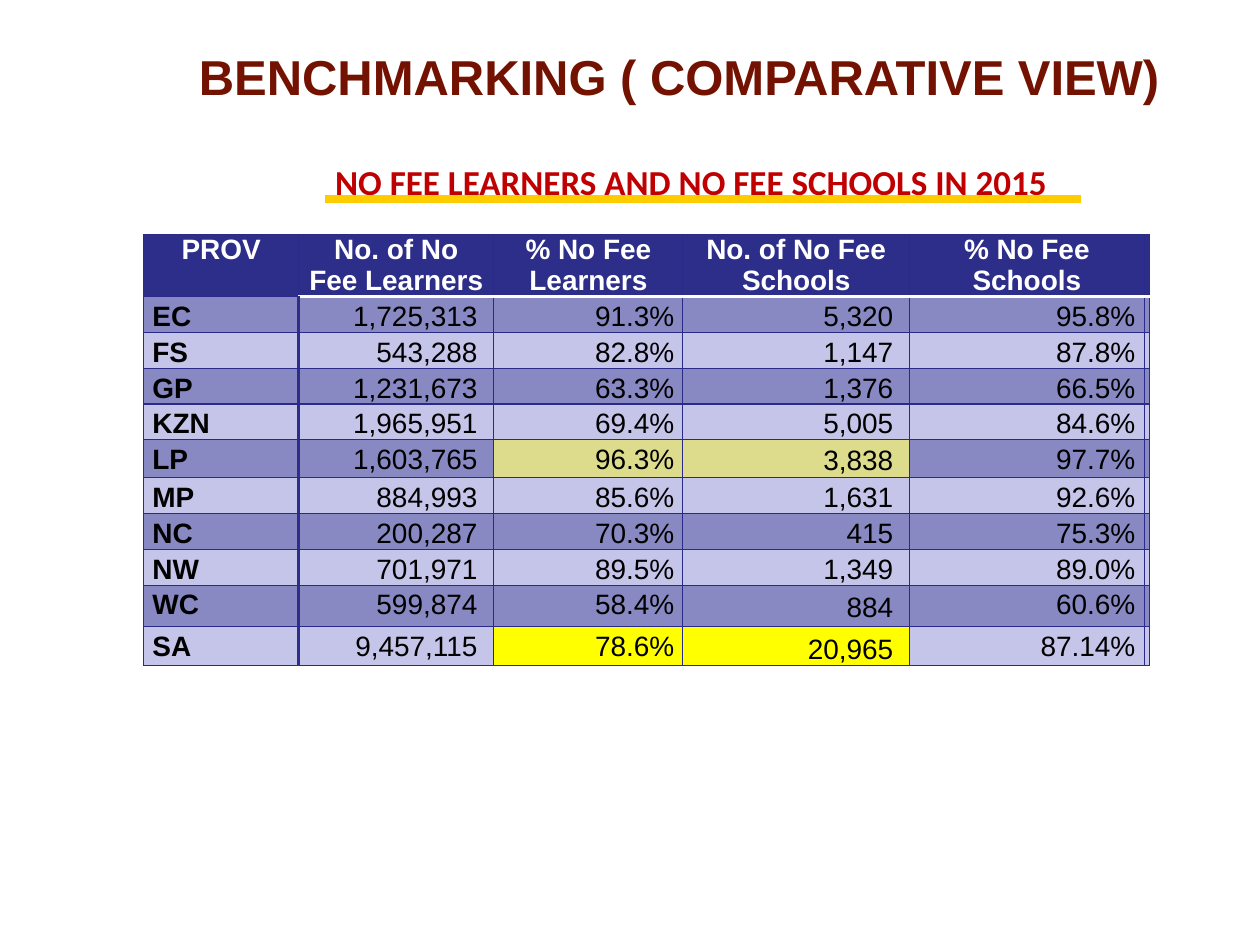
from lxml import etree
from pptx import Presentation
from pptx.dml.color import RGBColor
from pptx.enum import shapes, text
from pptx.oxml import ns
from pptx.util import Inches, Pt

HUES = {"navy": "2D2D8A", "edge": "2A2A89", "dark": "8888C2", "light": "C5C4E9",
        "lime": "DCDC8C", "yellow": "FFFF00", "gold": "FFCC00", "red": "C00000",
        "brown": "741202", "white": "FFFFFF", "black": "000000"}
HEAD = ["PROV", "No. of No Fee Learners", "% No Fee Learners",
        "No. of No Fee Schools", "% No Fee Schools", ""]
ROWS = [
    ["EC", "1,725,313 ", "91.3%", "5,320 ", "95.8%", ""],
    ["FS", "543,288 ", "82.8%", "1,147 ", "87.8%", ""],
    ["GP", "1,231,673 ", "63.3%", "1,376 ", "66.5%", ""],
    ["KZN", "1,965,951 ", "69.4%", "5,005 ", "84.6%", ""],
    ["LP", "1,603,765 ", "96.3%", "3,838 ", "97.7%", ""],
    ["MP", "884,993 ", "85.6%", "1,631 ", "92.6%", ""],
    ["NC", "200,287 ", "70.3%", "415 ", "75.3%", ""],
    ["NW", "701,971 ", "89.5%", "1,349 ", "89.0%", ""],
    ["WC", "599,874 ", "58.4%", "884 ", "60.6%", ""],
    ["SA", "9,457,115 ", "78.6%", "20,965 ", "87.14%", ""],
]
WIDE = [1.23, 1.55, 1.5, 1.8, 1.86, 0.04]
HIGH = [0.49] + [0.28] * 4 + [0.3] + [0.28] * 3 + [0.33, 0.31]
MARKS = {(5, 2): "lime", (5, 3): "lime", (10, 2): "yellow", (10, 3): "yellow"}


def put(para, words, size, hue, bold=True, face="Arial"):
    """Add one formatted run to a paragraph."""
    run = para.add_run()
    run.text = words
    font = run.font
    font.size, font.bold, font.name = Pt(size), bold, face
    font.color.rgb = RGBColor.from_string(HUES[hue])


def rule(cell, side, hue="edge", width=0.75):
    """Draw one border of a cell; sides must come in the order L, R, T, B."""
    line = etree.SubElement(cell._tc.get_or_add_tcPr(), ns.qn("a:ln" + side),
                            w=str(Pt(width)))
    fill = etree.SubElement(line, ns.qn("a:solidFill"))
    etree.SubElement(fill, ns.qn("a:srgbClr"), val=HUES[hue])


deck = Presentation()
deck.slide_width, deck.slide_height = Inches(10), Inches(7.5)
slide = deck.slides.add_slide(deck.slide_layouts[5])

# Gold underline and title
line = slide.shapes.add_connector(shapes.MSO_CONNECTOR.STRAIGHT, Inches(2.58),
                                  Inches(1.58), Inches(8.58), Inches(1.58))
line.line.color.rgb = RGBColor.from_string(HUES["gold"])
line.line.width = Pt(4.5)
etree.SubElement(line._element.spPr, ns.qn("a:effectLst"))

title = slide.shapes.title
title.left, title.top = Inches(2.56), Inches(1.23)
title.width, title.height = Inches(6.38), Inches(0.71)
frame = title.text_frame
frame.word_wrap = True
frame.vertical_anchor = text.MSO_ANCHOR.TOP
frame.margin_top = Inches(0.04)
frame.paragraphs[0].alignment = text.PP_ALIGN.LEFT
put(frame.paragraphs[0], "NO FEE LEARNERS AND NO FEE SCHOOLS IN 2015", 20, "red",
    face="Calibri")

# Table
grid = slide.shapes.add_table(len(HIGH), len(WIDE), Inches(1.14), Inches(1.86),
                              Inches(sum(WIDE)), Inches(sum(HIGH))).table
for col, wide in zip(grid.columns, WIDE):
    col.width = Inches(wide)
for row, high in zip(grid.rows, HIGH):
    row.height = Inches(high)

for r, row in enumerate([HEAD] + ROWS):
    for c, words in enumerate(row):
        cell = grid.cell(r, c)
        thick = ("navy", 2.25)
        white = ("white", 2.25)
        rule(cell, "L", *(thick if r and c == 1 else ()))
        rule(cell, "R", *(thick if r and c == 0 else ()))
        rule(cell, "T", *(white if r == 1 and c else ()))
        rule(cell, "B", *(white if r == 0 and c else ()))
        hue = "navy" if r == 0 else MARKS.get((r, c), "dark" if r % 2 else "light")
        cell.fill.solid()
        cell.fill.fore_color.rgb = RGBColor.from_string(HUES[hue])
        cell.margin_top = cell.margin_bottom = 0
        cell.margin_left = cell.margin_right = Inches(0.07 if words else 0)
        para = cell.text_frame.paragraphs[0]
        if not words:
            etree.SubElement(para._p, ns.qn("a:endParaRPr"), sz="800")
            continue
        if r == 0:
            para.alignment = text.PP_ALIGN.CENTER
        else:
            para.line_spacing = 1.15
            para.alignment = text.PP_ALIGN.RIGHT if c else text.PP_ALIGN.LEFT
            if c == 3:
                cell.vertical_anchor = (text.MSO_ANCHOR.BOTTOM if r == len(ROWS)
                                        else text.MSO_ANCHOR.MIDDLE)
        put(para, words, 16, "black" if r else "white", bold=r == 0 or c == 0)

# Main heading
box = slide.shapes.add_textbox(Inches(1.48), Inches(0.29), Inches(8.24), Inches(0.63))
frame = box.text_frame
frame.word_wrap = True
frame.vertical_anchor = text.MSO_ANCHOR.MIDDLE
put(frame.paragraphs[0], "BENCHMARKING ( COMPARATIVE VIEW)", 28, "brown")

deck.save("out.pptx")
